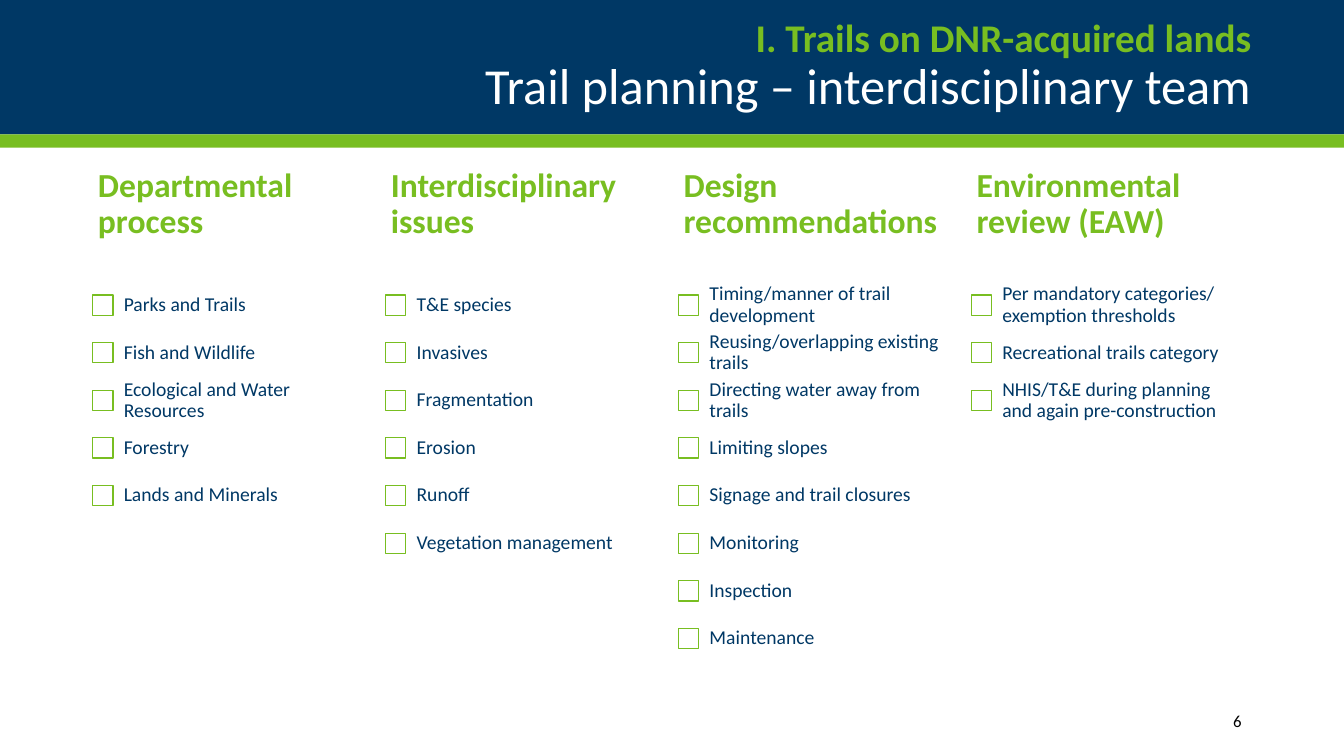
from dataclasses import dataclass

from pptx import Presentation
from pptx.dml.color import RGBColor
from pptx.enum.shapes import MSO_SHAPE as Preset
from pptx.enum.text import MSO_ANCHOR as Anchor, MSO_AUTO_SIZE as AutoSize, PP_ALIGN as Align
from pptx.util import Cm, Pt

# Content
SECTION = "I. Trails on DNR-acquired lands"
TOPIC = "Trail planning – interdisciplinary team"
PAGE_NUMBER = "6"
CHECKLISTS = {
    "Departmental process": [
        "Parks and Trails", "Fish and Wildlife", "Ecological and Water Resources",
        "Forestry", "Lands and Minerals",
    ],
    "Interdisciplinary issues": [
        "T&E species", "Invasives", "Fragmentation", "Erosion", "Runoff",
        "Vegetation management",
    ],
    "Design recommendations": [
        "Timing/manner of trail development", "Reusing/overlapping existing trails",
        "Directing water away from trails", "Limiting slopes",
        "Signage and trail closures", "Monitoring", "Inspection", "Maintenance",
    ],
    "Environmental review (EAW)": [
        "Per mandatory categories/ exemption thresholds",
        "Recreational trails category",
        "NHIS/T&E during planning and again pre-construction",
    ],
}


@dataclass(frozen=True)
class Theme:
    font: str = "Calibri"
    navy: RGBColor = RGBColor(0x00, 0x38, 0x65)
    green: RGBColor = RGBColor(0x78, 0xBE, 0x21)
    white: RGBColor = RGBColor(0xFF, 0xFF, 0xFF)
    black: RGBColor = RGBColor(0x00, 0x00, 0x00)
    section: Pt = Pt(28)
    topic: Pt = Pt(36)
    heading: Pt = Pt(24)
    item: Pt = Pt(14)
    page: Pt = Pt(12)
    outline: Pt = Pt(0.85)


THEME = Theme()

# Layout, in centimetres
SLIDE_WIDTH, SLIDE_HEIGHT = 33.87, 19.05
HEADER_HEIGHT, STRIPE_HEIGHT = 3.39, 0.33
MARGIN = 2.34
CONTENT_WIDTH = SLIDE_WIDTH - 2 * MARGIN
COLUMN_WIDTH, COLUMN_STEP = 7.04, 7.38
HEADING_TOP, HEADING_HEIGHT = 4.42, 1.48
ROWS_TOP, ROW_HEIGHT = 7.09, 1.2
CHECKBOX = 0.51


def style_font(font, size, color, bold=False):
    font.name, font.size, font.bold = THEME.font, size, bold
    font.color.rgb = color


def set_frame(frame, side, end):
    frame.word_wrap = True
    frame.auto_size = AutoSize.NONE
    frame.vertical_anchor = Anchor.MIDDLE
    frame.margin_left = frame.margin_right = Cm(side)
    frame.margin_top = frame.margin_bottom = Cm(end)


def add_rectangle(page, left, top, width, height, fill, outline=None):
    box = page.shapes.add_shape(Preset.RECTANGLE, Cm(left), Cm(top), Cm(width), Cm(height))
    box.shadow.inherit = False
    box.fill.solid()
    box.fill.fore_color.rgb = fill
    if outline is None:
        box.line.fill.background()
    else:
        box.line.color.rgb = outline
        box.line.width = THEME.outline


def add_text(page, text, left, top, width, height, size, color,
             bold=False, align=Align.LEFT, side=0.25, end=0.13, spacing=0.9):
    box = page.shapes.add_textbox(Cm(left), Cm(top), Cm(width), Cm(height))
    set_frame(box.text_frame, side, end)
    para = box.text_frame.paragraphs[0]
    para.text, para.alignment, para.line_spacing = text, align, spacing
    style_font(para.font, size, color, bold)


def add_header(page):
    add_rectangle(page, 0, 0, SLIDE_WIDTH, HEADER_HEIGHT, THEME.navy)
    add_rectangle(page, 0, HEADER_HEIGHT, SLIDE_WIDTH, STRIPE_HEIGHT, THEME.green)

    title = page.shapes.title
    title.element.getparent().append(title.element)  # bring in front of the bands
    title.left, title.top = Cm(MARGIN), Cm(0)
    title.width, title.height = Cm(CONTENT_WIDTH), Cm(HEADER_HEIGHT)
    set_frame(title.text_frame, 0, 0.13)
    para = title.text_frame.paragraphs[0]
    para.alignment, para.line_spacing = Align.RIGHT, 0.9
    span = para.add_run()
    span.text = SECTION
    style_font(span.font, THEME.section, THEME.green, bold=True)
    para.add_line_break()
    span = para.add_run()
    span.text = TOPIC
    style_font(span.font, THEME.topic, THEME.white)


def add_checklist(page, left, heading, items):
    add_text(page, heading, left, HEADING_TOP, COLUMN_WIDTH, HEADING_HEIGHT,
             THEME.heading, THEME.green, bold=True, side=0.13, end=0.07)
    for row, item in enumerate(items):
        top = ROWS_TOP + row * ROW_HEIGHT
        add_rectangle(page, left, top + (ROW_HEIGHT - CHECKBOX) / 2, CHECKBOX, CHECKBOX,
                      THEME.white, THEME.green)
        add_text(page, item, left + CHECKBOX, top, COLUMN_WIDTH - CHECKBOX, ROW_HEIGHT,
                 THEME.item, THEME.navy, side=0.27, end=0.27)


def main():
    deck = Presentation()
    deck.slide_width, deck.slide_height = Cm(SLIDE_WIDTH), Cm(SLIDE_HEIGHT)
    page = deck.slides.add_slide(deck.slide_layouts.get_by_name("Title Only"))

    # Header bands and title
    add_header(page)

    # One checklist per column
    for column, (heading, items) in enumerate(CHECKLISTS.items()):
        add_checklist(page, MARGIN + column * COLUMN_STEP, heading, items)

    # Page number
    add_text(page, PAGE_NUMBER, 27.48, 17.65, 4.06, 1.02, THEME.page, THEME.black,
             align=Align.RIGHT, spacing=1.0)

    deck.save("out.pptx")


if __name__ == "__main__":
    main()
